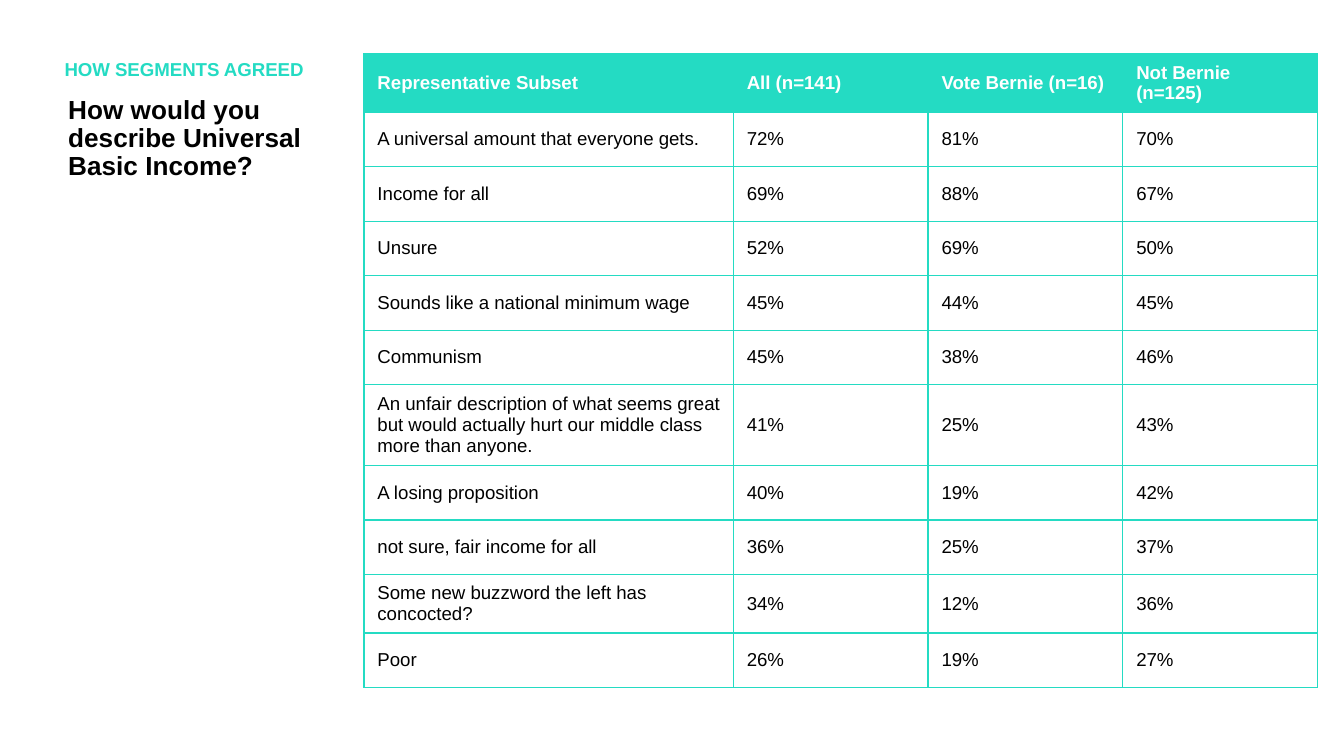
from dataclasses import dataclass

from lxml import etree
from pptx import Presentation
from pptx.dml.color import RGBColor
from pptx.enum import text
from pptx.oxml import ns
from pptx.util import Cm, Pt


@dataclass(frozen=True)
class Theme:
    font: str = "Arial"
    accent: str = "24DBC3"
    ink: str = "000000"
    paper: str = "FFFFFF"
    question_size: int = 14
    body_size: int = 10
    border: float = 0.75


THEME = Theme()
HEADINGS = ("Representative Subset", "All (n=141)", "Vote Bernie (n=16)", "Not Bernie\v(n=125)")
ANSWERS = [
    ("A universal amount that everyone gets.", 72, 81, 70),
    ("Income for all", 69, 88, 67),
    ("Unsure", 52, 69, 50),
    ("Sounds like a national minimum wage", 45, 44, 45),
    ("Communism", 45, 38, 46),
    ("An unfair description of what seems great but would actually hurt our "
     "middle class more than anyone.", 41, 25, 43),
    ("A losing proposition", 40, 19, 42),
    ("not sure, fair income for all", 36, 25, 37),
    ("Some new buzzword the left has concocted?", 34, 12, 36),
    ("Poor", 26, 19, 27),
]
COLUMN_WIDTHS = (6.98, 3.68, 3.68, 3.68)
ROW_HEIGHT = 1.03


def style_font(paragraph, size, color, bold):
    font = paragraph.font
    font.name = THEME.font
    font.size = Pt(size)
    font.bold = bold
    font.color.rgb = RGBColor.from_string(color)


def add_heading(slide, wording, left, top, width, height, size, color):
    frame = slide.shapes.add_textbox(Cm(left), Cm(top), Cm(width), Cm(height)).text_frame
    frame.word_wrap = True
    frame.text = wording
    paragraph = frame.paragraphs[0]
    paragraph.line_spacing = 0.9
    paragraph.space_before = Pt(10)
    style_font(paragraph, size, color, True)


def add_borders(cell):
    properties = cell._tc.get_or_add_tcPr()
    for position, side in enumerate(("lnL", "lnR", "lnT", "lnB")):
        line = etree.Element(ns.qn(f"a:{side}"), w=str(Pt(THEME.border)))
        fill = etree.SubElement(line, ns.qn("a:solidFill"))
        etree.SubElement(fill, ns.qn("a:srgbClr"), val=THEME.accent)
        properties.insert(position, line)


def fill_cell(cell, wording, background, color, bold):
    cell.text = wording
    cell.vertical_anchor = text.MSO_ANCHOR.MIDDLE
    cell.fill.solid()
    cell.fill.fore_color.rgb = RGBColor.from_string(background)
    style_font(cell.text_frame.paragraphs[0], THEME.body_size, color, bold)
    add_borders(cell)


def add_agreement_table(slide, left, top):
    rows = [HEADINGS] + [
        (answer, *(f"{share}%" for share in shares)) for answer, *shares in ANSWERS
    ]
    agreement = slide.shapes.add_table(
        len(rows), len(HEADINGS), Cm(left), Cm(top),
        Cm(sum(COLUMN_WIDTHS)), Cm(ROW_HEIGHT * len(rows)),
    ).table
    agreement.horz_banding = False
    for column, width in zip(agreement.columns, COLUMN_WIDTHS):
        column.width = Cm(width)
    for index, wordings in enumerate(rows):
        agreement.rows[index].height = Cm(ROW_HEIGHT)
        is_header = index == 0
        background = THEME.accent if is_header else THEME.paper
        color = THEME.paper if is_header else THEME.ink
        for cell, wording in zip(agreement.rows[index].cells, wordings):
            fill_cell(cell, wording, background, color, is_header)


def main():
    deck = Presentation()
    deck.slide_width = Cm(25.4)
    deck.slide_height = Cm(14.29)
    slide = deck.slides.add_slide(deck.slide_layouts[6])
    add_heading(slide, "How would you describe Universal Basic Income?",
                1.04, 1.7, 5.84, 11.2, THEME.question_size, THEME.ink)
    add_heading(slide, "HOW SEGMENTS AGREED",
                0.97, 1.02, 5.89, 0.71, THEME.body_size, THEME.accent)
    add_agreement_table(slide, 6.88, 1.02)
    deck.save("out.pptx")


if __name__ == "__main__":
    main()
